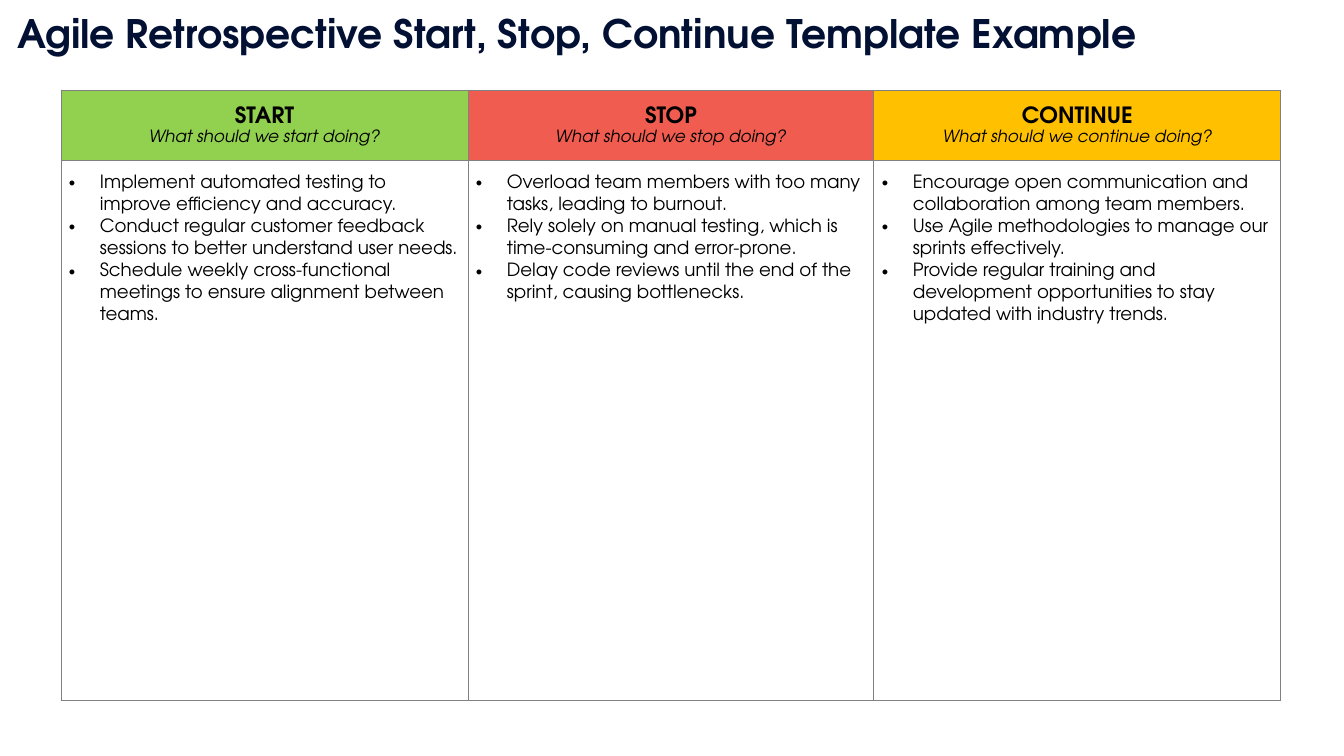
from lxml import etree
from pptx import Presentation
from pptx.dml.color import RGBColor
from pptx.enum.text import MSO_ANCHOR, MSO_AUTO_SIZE, PP_ALIGN
from pptx.oxml.ns import qn
from pptx.util import Emu, Pt

TOP, MIDDLE = MSO_ANCHOR.TOP, MSO_ANCHOR.MIDDLE
LEFT, CENTER = PP_ALIGN.LEFT, PP_ALIGN.CENTER
NO_AUTOFIT = MSO_AUTO_SIZE.NONE

NAVY = RGBColor(0x01, 0x10, 0x33)
BLACK = RGBColor(0x00, 0x00, 0x00)
WHITE = RGBColor(0xFF, 0xFF, 0xFF)
GRAY = RGBColor(0x80, 0x80, 0x80)
GREEN = RGBColor(0x92, 0xD0, 0x50)
RED = RGBColor(0xF0, 0x5C, 0x4F)
AMBER = RGBColor(0xFF, 0xC0, 0x00)

FONT = "TeX Gyre Adventor"
TITLE = "Agile Retrospective Start, Stop, Continue Template Example"
COL_WIDTHS = (407, 406, 407)
ROW_HEIGHTS = (70, 540)
COLUMNS = [
    ("START", "What should we start doing?", GREEN, [
        "Implement automated testing to improve efficiency and accuracy.",
        "Conduct regular customer feedback sessions to better understand user needs.",
        "Schedule weekly cross-functional meetings to ensure alignment between teams.",
    ]),
    ("STOP", "What should we stop doing?", RED, [
        "Overload team members with too many tasks, leading to burnout.",
        "Rely solely on manual testing, which is time-consuming and error-prone.",
        "Delay code reviews until the end of the sprint, causing bottlenecks.",
    ]),
    ("CONTINUE", "What should we continue doing?", AMBER, [
        "Encourage open communication and collaboration among team members.",
        "Use Agile methodologies to manage our sprints effectively.",
        "Provide regular training and development opportunities to stay updated with industry trends.",
    ]),
]


def px(n):
    return Emu(round(n * 914400 / 100.8))


def add_run(p, text, size, color=BLACK, bold=False, italic=False):
    r = p.add_run()
    r.text = text
    r.font.name = FONT
    r.font.size = Pt(size)
    r.font.bold = bold
    r.font.italic = italic
    r.font.color.rgb = color


def next_paragraph(tf, index, line_spacing):
    p = tf.add_paragraph() if index else tf.paragraphs[0]
    p.line_spacing = line_spacing
    return p


def add_bullet(p):
    pPr = p._p.get_or_add_pPr()
    pPr.set("marL", str(px(31)))
    pPr.set("indent", str(-px(31)))
    etree.SubElement(pPr, qn("a:buFont")).set("typeface", "Arial")
    etree.SubElement(pPr, qn("a:buChar")).set("char", "•")


def style_cell(cell, fill, anchor, margin_y):
    cell.fill.solid()
    cell.fill.fore_color.rgb = fill
    cell.vertical_anchor = anchor
    cell.margin_left = cell.margin_right = px(8)
    cell.margin_top = cell.margin_bottom = px(margin_y)
    tcPr = cell._tc.get_or_add_tcPr()
    for i, side in enumerate(("lnL", "lnR", "lnT", "lnB")):
        ln = etree.Element(qn(f"a:{side}"), w=str(Pt(0.75)))
        line_fill = etree.SubElement(ln, qn("a:solidFill"))
        etree.SubElement(line_fill, qn("a:srgbClr")).set("val", str(GRAY))
        tcPr.insert(i, ln)


def fill_header(cell, heading, question, color):
    style_cell(cell, color, MIDDLE, 0)
    tf = cell.text_frame
    for i, (text, size) in enumerate(((heading, 16), (question, 12))):
        p = next_paragraph(tf, i, 1.15)
        p.alignment = CENTER
        add_run(p, text, size, bold=i == 0, italic=i == 1)


def fill_body(cell, items):
    style_cell(cell, WHITE, TOP, 10)
    for i, item in enumerate(items):
        p = next_paragraph(cell.text_frame, i, 1.3)
        add_bullet(p)
        add_run(p, item, 13)


def add_title(slide):
    sp = slide.shapes.title
    sp.left, sp.top, sp.width, sp.height = px(7), px(4), px(1191), px(57)
    tf = sp.text_frame
    tf.word_wrap = True
    tf.auto_size = NO_AUTOFIT
    tf.vertical_anchor = TOP
    p = tf.paragraphs[0]
    p.alignment = LEFT
    add_run(p, TITLE, 28, NAVY, bold=True)


def add_board(slide):
    frame = slide.shapes.add_table(len(ROW_HEIGHTS), len(COLUMNS), px(61), px(90),
                                   px(sum(COL_WIDTHS)), px(sum(ROW_HEIGHTS)))
    table = frame.table
    table.first_row = table.horz_banding = False
    for row, height in zip(table.rows, ROW_HEIGHTS):
        row.height = px(height)
    for i, (heading, question, color, items) in enumerate(COLUMNS):
        table.columns[i].width = px(COL_WIDTHS[i])
        fill_header(table.cell(0, i), heading, question, color)
        fill_body(table.cell(1, i), items)


def main():
    prs = Presentation()
    prs.slide_width, prs.slide_height = px(1344), px(756)
    slide = prs.slides.add_slide(prs.slide_layouts[5])
    add_title(slide)
    add_board(slide)
    prs.save("out.pptx")


if __name__ == "__main__":
    main()
